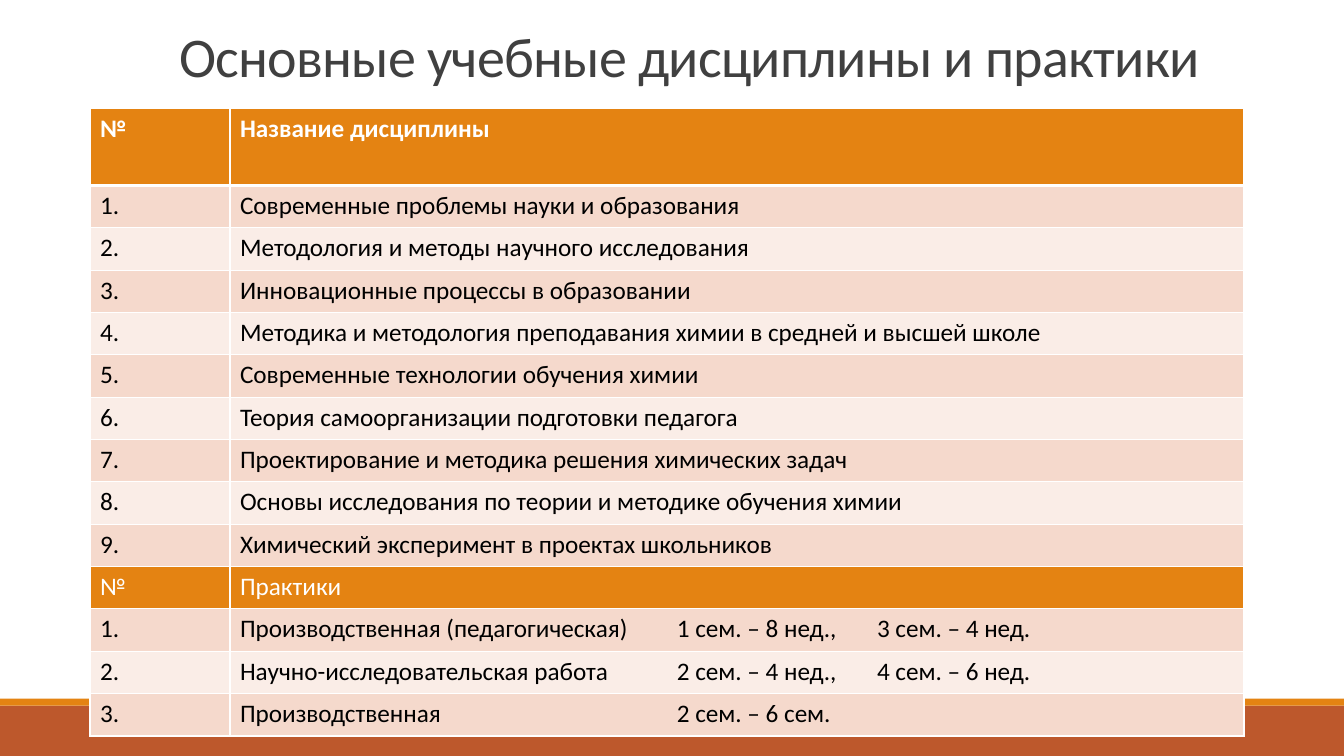
import pptx
import pptx.util
import pptx.dml.color
import pptx.enum.shapes
import pptx.enum.text
import pptx.oxml
import pptx.oxml.ns

Pt = pptx.util.Pt

HEADING = "Основные учебные дисциплины и практики"
DISCIPLINES = [
    "Современные проблемы науки и образования",
    "Методология и методы научного исследования",
    "Инновационные процессы в образовании",
    "Методика и методология преподавания химии в средней и высшей школе",
    "Современные технологии обучения химии",
    "Теория самоорганизации подготовки педагога",
    "Проектирование и методика решения химических задач",
    "Основы исследования по теории и методике обучения химии",
    "Химический эксперимент в проектах школьников",
]
PRACTICES = [
    ("Производственная (педагогическая)", "1 сем. – 8 нед.,", "3 сем. – 4 нед."),
    ("Научно-исследовательская работа", "2 сем. – 4 нед.,", "4 сем. – 6 нед."),
    ("Производственная", "2 сем. – 6 сем."),
]
SECTIONS = [
    ("Название дисциплины", DISCIPLINES),
    ("Практики", ["\t".join(practice) for practice in PRACTICES]),
]

COLORS = {
    "rust": "BD582C", "orange": "E48312", "odd": "F5D9CC", "even": "FAEDE7",
    "white": "FFFFFF", "black": "000000", "heading": "404040",
}
SLIDE_W, SLIDE_H = 960, 540
BANDS = [("rust", 504, 36), ("orange", 499, 5)]
TABLE_LEFT, TABLE_TOP = 64.3, 77.2
COLUMN_WIDTHS = [100, 724.3]
HEADER_H, ROW_H = 55.3, 30.25
SEMESTER_TABS = [312, 455]
CELL_FORMAT = {"name": "Calibri", "size": Pt(18)}
HEADING_FORMAT = {"name": "Calibri", "size": Pt(40), "bold": False}
HEADING_PLACE = {"left": Pt(96.5), "top": Pt(11.5), "width": Pt(792), "height": Pt(55.5)}


def rgb(color):
    return pptx.dml.color.RGBColor.from_string(COLORS[color])


def apply(target, values):
    for key, value in values.items():
        setattr(target, key, value)


def xml(tag, attributes, content=""):
    return pptx.oxml.parse_xml(
        f'<a:{tag} {pptx.oxml.ns.nsdecls("a")} {attributes}>{content}</a:{tag}>')


def set_borders(cell, widths):
    properties = cell._tc.get_or_add_tcPr()
    line_fill = f'<a:solidFill><a:srgbClr val="{COLORS["white"]}"/></a:solidFill>'
    for position, (side, width) in enumerate(widths.items()):
        properties.insert(position, xml(f"ln{side}", f'w="{Pt(width)}"', line_fill))


def add_band(slide, color, top, height):
    band = slide.shapes.add_shape(
        pptx.enum.shapes.MSO_SHAPE.RECTANGLE, 0, Pt(top), Pt(SLIDE_W), Pt(height))
    band.shadow.inherit = False
    band.fill.solid()
    band.fill.fore_color.rgb = rgb(color)
    band.line.fill.background()


def format_heading(heading):
    apply(heading, HEADING_PLACE)
    frame = heading.text_frame
    frame.text = HEADING
    apply(frame, {"word_wrap": True,
                  "auto_size": pptx.enum.text.MSO_AUTO_SIZE.NONE,
                  "vertical_anchor": pptx.enum.text.MSO_ANCHOR.BOTTOM})
    line = frame.paragraphs[0]
    apply(line, {"alignment": pptx.enum.text.PP_ALIGN.CENTER, "line_spacing": 0.85})
    words = line.runs[0]
    apply(words.font, HEADING_FORMAT)
    words.font.color.rgb = rgb("heading")
    words._r.get_or_add_rPr().set("spc", "-50")


def fill_cell(cell, text, fill, ink, bold, top_line, bottom_line):
    cell.fill.solid()
    cell.fill.fore_color.rgb = rgb(fill)
    set_borders(cell, {"L": 1, "R": 1, "T": top_line, "B": bottom_line})
    line = cell.text_frame.paragraphs[0]
    if "\t" in text:
        stops = "".join(f'<a:tab pos="{Pt(stop)}" algn="l"/>' for stop in SEMESTER_TABS)
        line._p.get_or_add_pPr().append(xml("tabLst", "", stops))
    words = line.add_run()
    words.text = text
    apply(words.font, {**CELL_FORMAT, "bold": bold})
    words.font.color.rgb = rgb(ink)


def add_curriculum(slide):
    rows = []
    for section, names in SECTIONS:
        rows.append(("№", section, "orange", "white"))
        for number, name in enumerate(names, 1):
            rows.append((f"{number}.", name, "odd" if number % 2 else "even", "black"))
    height = HEADER_H + ROW_H * (len(rows) - 1)
    curriculum = slide.shapes.add_table(
        len(rows), len(COLUMN_WIDTHS), Pt(TABLE_LEFT), Pt(TABLE_TOP),
        Pt(sum(COLUMN_WIDTHS)), Pt(height)).table
    apply(curriculum, {"first_row": False, "horz_banding": False})
    for column, width in zip(curriculum.columns, COLUMN_WIDTHS):
        column.width = Pt(width)
    for index, (number, name, fill, ink) in enumerate(rows):
        curriculum.rows[index].height = Pt(ROW_H if index else HEADER_H)
        for column, text in enumerate((number, name)):
            fill_cell(curriculum.cell(index, column), text, fill, ink, index == 0,
                      3 if index == 1 else 1, 3 if index == 0 else 1)


def main():
    deck = pptx.Presentation()
    apply(deck, {"slide_width": Pt(SLIDE_W), "slide_height": Pt(SLIDE_H)})
    slide = deck.slides.add_slide(deck.slide_layouts.get_by_name("Title Only"))
    for band in BANDS:
        add_band(slide, *band)
    format_heading(slide.shapes.title)
    add_curriculum(slide)
    deck.save("out.pptx")


if __name__ == "__main__":
    main()
